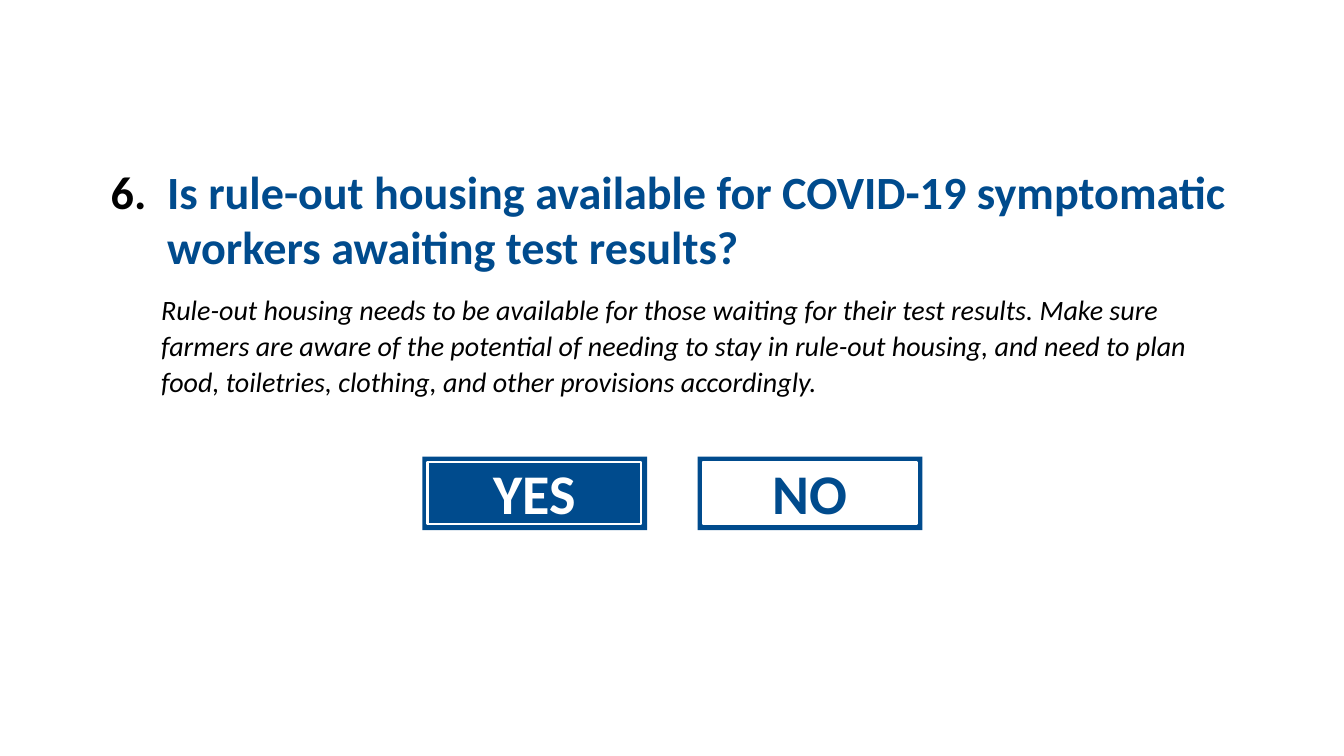
"""Build a checklist slide with one question and its yes and no buttons."""
from lxml.etree import SubElement as Sub
from pptx import Presentation
from pptx.dml.color import RGBColor as RGB
from pptx.enum.shapes import MSO_SHAPE as Shape
from pptx.enum.text import MSO_AUTO_SIZE as Auto, PP_ALIGN as Align
from pptx.oxml.ns import qn
from pptx.util import Inches, Pt

COLORS = {"blue": "004B8D", "white": "FFFFFF", "black": "000000"}


class Deck:
    """Hold the style and the current slide."""

    font = "Calibri"

    def __init__(self):
        """Open a wide deck with one blank slide."""
        self.show = Presentation()
        self.show.slide_width = Inches(13.33)
        self.show.slide_height = Inches(7.5)
        self.slide = self.show.slides.add_slide(self.show.slide_layouts[6])

    def color(self, name):
        """Return a named color."""
        return RGB.from_string(COLORS[name])

    def text(self, home, box, words, size, color, bold=False, italic=False):
        """Add a text box and return its paragraph."""
        frame = home.add_textbox(*map(Inches, box)).text_frame
        frame.word_wrap = True
        frame.auto_size = Auto.SHAPE_TO_FIT_TEXT
        para = frame.paragraphs[0]
        para.text = words
        font = para.font
        font.name, font.size = self.font, Pt(size)
        font.bold, font.italic = bold, italic
        font.color.rgb = self.color(color)
        return para

    def number(self, para, start, color, indent):
        """Number a paragraph with a hanging indent."""
        props = para._p.get_or_add_pPr()
        props.set("marL", str(Inches(indent)))
        props.set("indent", str(-Inches(indent)))
        tint = Sub(props, qn("a:buClr"))
        Sub(tint, qn("a:srgbClr"), val=COLORS[color])
        Sub(props, qn("a:buFont"), typeface="+mj-lt")
        Sub(props, qn("a:buAutoNum"), type="arabicPeriod", startAt=str(start))

    def rect(self, home, box, fill=None, line=None):
        """Add a rectangle with an optional fill and line."""
        rect = home.add_shape(Shape.RECTANGLE, *map(Inches, box))
        rect.shadow.inherit = False
        if fill:
            rect.fill.solid()
            rect.fill.fore_color.rgb = self.color(fill)
        else:
            rect.fill.background()
        if line:
            rect.line.color.rgb = self.color(line)
            rect.line.width = Pt(1.5)
        else:
            rect.line.fill.background()

    def button(self, left, top, label, inner, ink):
        """Add a framed button as a group."""
        home = self.slide.shapes.add_group_shape().shapes
        self.rect(home, (left, top, 2.23, 0.73), "blue")
        self.rect(home, (left + 0.05, top + 0.05, 2.12, 0.62), inner, "white")
        box = left + 0.59, top - 0.03, 1.05, 0.77
        para = self.text(home, box, label, 40, ink, bold=True)
        para.alignment = Align.CENTER


def main():
    """Draw the slide and save it."""
    deck = Deck()
    home = deck.slide.shapes
    ask = deck.text(
        home, (1, 1.57, 11.33, 1.21),
        "Is rule-out housing available for COVID-19 symptomatic "
        "workers awaiting test results?",
        33, "blue", bold=True)
    deck.number(ask, 6, "black", 0.56)
    note = deck.text(
        home, (1.5, 2.83, 10.97, 1.17),
        "Rule-out housing needs to be available for those waiting for their "
        "test results. Make sure farmers are aware of the potential of "
        "needing to stay in rule-out housing, and need to plan food, "
        "toiletries, clothing, and other provisions accordingly.",
        20, "black", italic=True)
    note.line_spacing = 1.07
    note.space_after = Pt(8)
    styles = ("YES", None, "white"), ("NO", "white", "blue")
    for step, style in enumerate(styles):
        deck.button(4.19 + 2.73 * step, 4.53, *style)
    deck.show.save("out.pptx")


if __name__ == "__main__":
    main()
